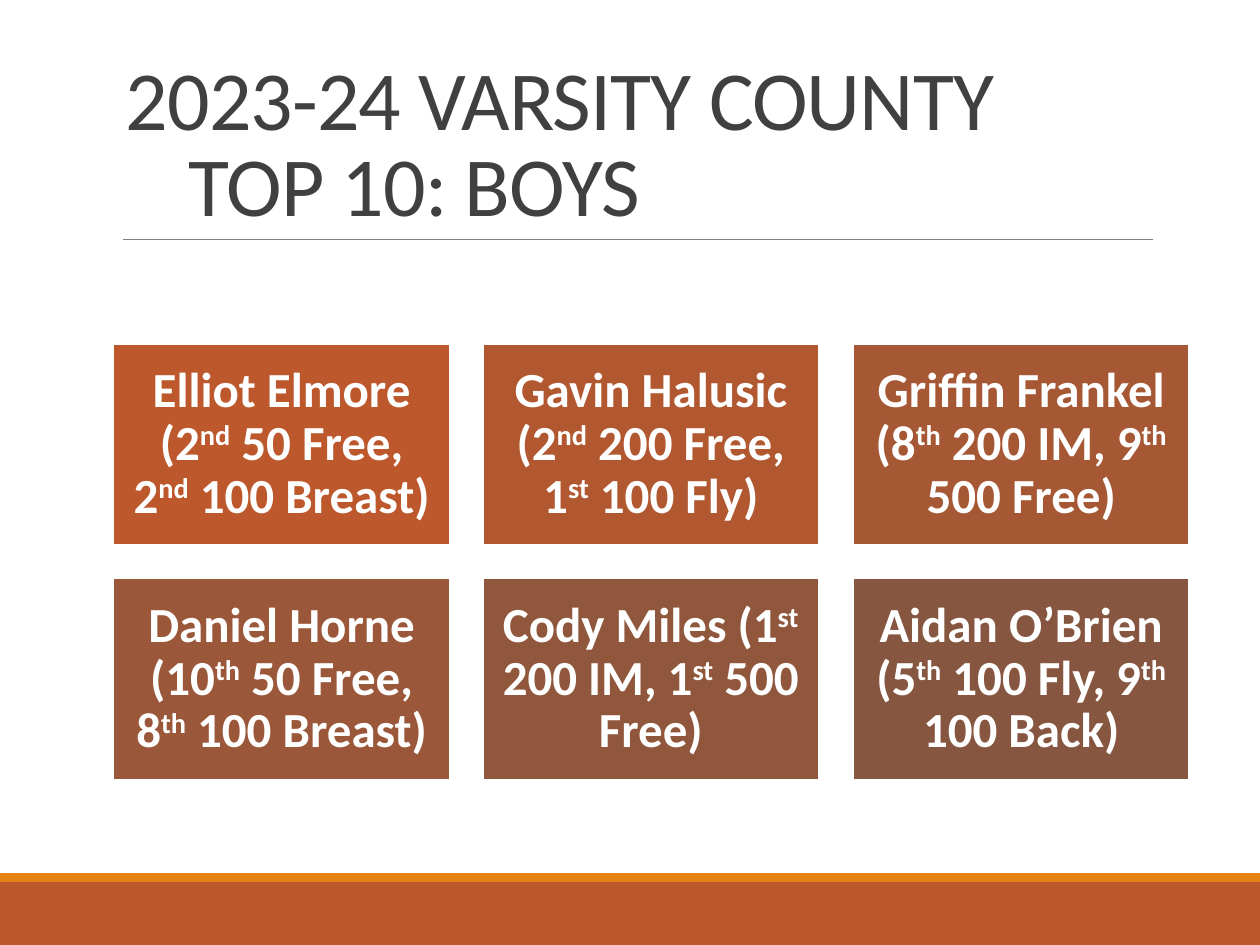
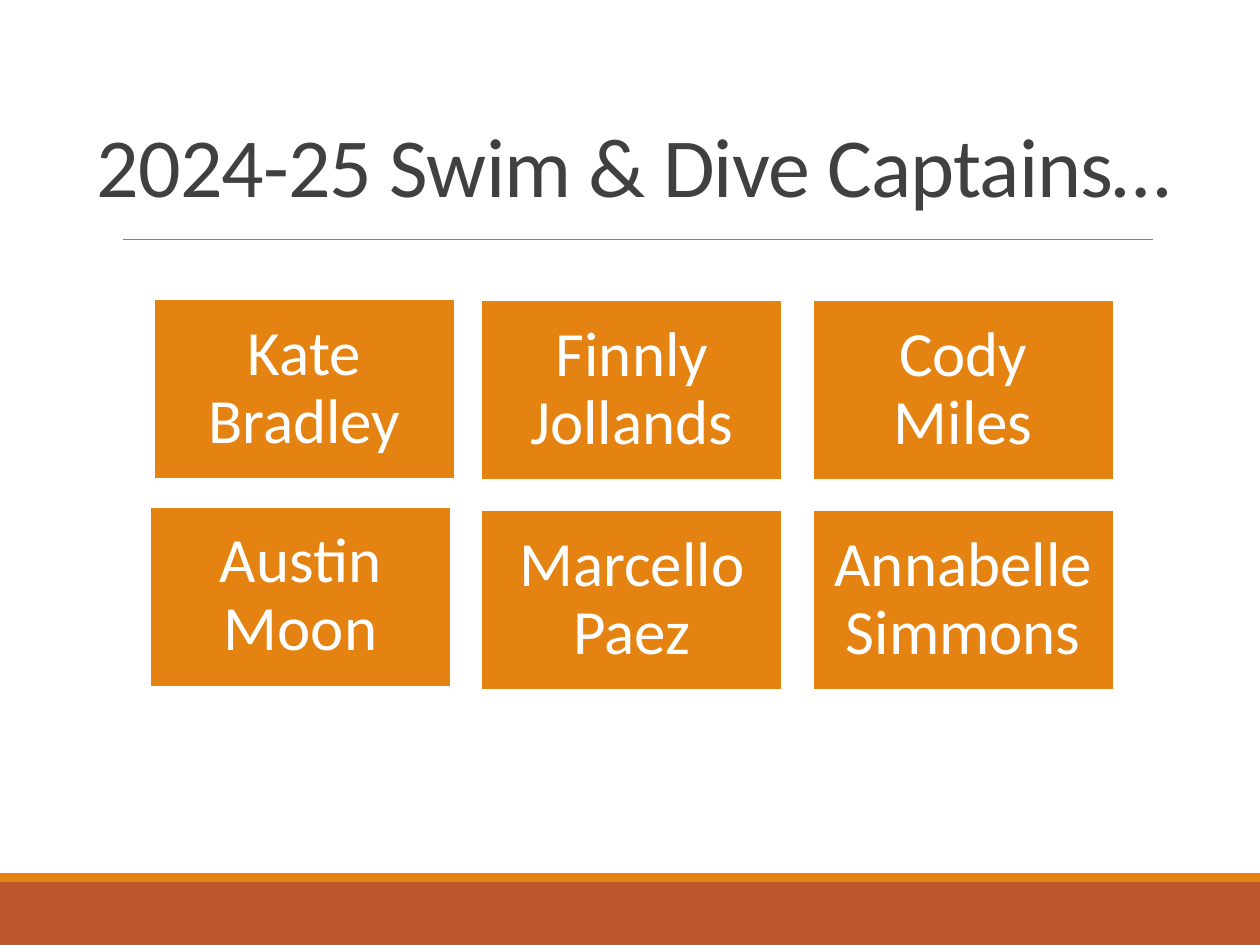
from itertools import product

from lxml import etree
from pptx import Presentation
from pptx.dml.color import RGBColor
from pptx.enum.shapes import MSO_CONNECTOR, MSO_SHAPE
from pptx.enum.text import MSO_ANCHOR, PP_ALIGN
from pptx.oxml.ns import qn
from pptx.util import Inches, Pt

RUST = RGBColor(0xBD, 0x58, 0x2C)
ORANGE = RGBColor(0xE4, 0x83, 0x12)
GRAY = RGBColor(0x80, 0x80, 0x80)
DARK = RGBColor(0x40, 0x40, 0x40)
WHITE = RGBColor(0xFF, 0xFF, 0xFF)
SHADES = [RUST] + [RGBColor.from_string(code) for code in
                   ("B15831", "A65835", "9B5739", "90573D", "865640")]

TITLE = {"name": "Calibri", "size": Pt(48), "bold": False}
RESULT = {"name": "Calibri", "size": Pt(28), "bold": True}
CAPTAIN = {"name": "Calibri", "size": Pt(36), "bold": False}


class Deck:
    """Holds the shared style and the current slide."""

    def __init__(self):
        self.prs = Presentation()
        self.prs.slide_width = Inches(10)
        self.prs.slide_height = Inches(7.5)
        self.slide = None

    def start(self):
        """Add a slide with the footer bands and the title rule."""
        self.slide = self.prs.slides.add_slide(self.prs.slide_layouts[6])
        self.rect((0, 7, 10, 0.5), RUST)
        self.rect((0, 6.93, 10, 0.07), ORANGE)
        self.rule(0.98, 9.15, 1.9)

    def rect(self, area, fill):
        shape = self.slide.shapes.add_shape(
            MSO_SHAPE.RECTANGLE, *map(Inches, area))
        shape.shadow.inherit = False
        shape.fill.solid()
        shape.fill.fore_color.rgb = fill
        shape.line.fill.background()
        return shape

    def rule(self, left, right, top):
        line = self.slide.shapes.add_connector(
            MSO_CONNECTOR.STRAIGHT, *map(Inches, (left, top, right, top)))
        line.line.color.rgb = GRAY
        line.line.width = Pt(0.5)
        etree.SubElement(line._element.spPr, qn("a:effectLst"))

    def style(self, run, look, color):
        for key, value in look.items():
            setattr(run.font, key, value)
        run.font.color.rgb = color

    def title(self, text, area):
        box = self.slide.shapes.add_textbox(*map(Inches, area))
        frame = box.text_frame
        frame.word_wrap = True
        frame.vertical_anchor = MSO_ANCHOR.BOTTOM
        para = frame.paragraphs[0]
        para.text = text
        para.line_spacing = 0.85
        for run in para.runs:
            self.style(run, TITLE, DARK)
            run.font._element.set("spc", "-50")

    def card(self, text, area, fill, look, inset):
        """Draw a filled card; text between ^ marks is raised."""
        shape = self.rect(area, fill)
        shape.line.color.rgb = WHITE
        shape.line.width = Pt(1.25)
        frame = shape.text_frame
        frame.word_wrap = True
        frame.vertical_anchor = MSO_ANCHOR.MIDDLE
        for side in ("left", "top", "right", "bottom"):
            setattr(frame, f"margin_{side}", Inches(inset))
        para = frame.paragraphs[0]
        para.alignment = PP_ALIGN.CENTER
        para.line_spacing = 0.9
        for index, part in enumerate(text.split("^")):
            run = para.add_run()
            run.text = part
            self.style(run, look, WHITE)
            if index % 2:
                run.font._element.set("baseline", "30000")


def main():
    deck = Deck()

    # Boys' county results, each card a shade darker
    deck.start()
    deck.title("2023-24 VARSITY COUNTY\v\tTOP 10: BOYS",
               (0.9, 0.31, 8.25, 1.59))
    results = [
        "Elliot Elmore (2^nd^ 50 Free, 2^nd^ 100 Breast)",
        "Gavin Halusic (2^nd^ 200 Free, 1^st^ 100 Fly)",
        "Griffin Frankel (8^th^ 200 IM, 9^th^ 500 Free)",
        "Daniel Horne (10^th^ 50 Free, 8^th^ 100 Breast)",
        "Cody Miles (1^st^ 200 IM, 1^st^ 500 Free)",
        "Aidan O’Brien (5^th^ 100 Fly, 9^th^ 100 Back)",
    ]
    spots = product((2.73, 4.59), (0.9, 3.83, 6.77))
    for text, (top, left), shade in zip(results, spots, SHADES):
        deck.card(text, (left, top, 2.67, 1.6), shade, RESULT, 0.12)

    # Captains, with the first column set slightly off the grid
    deck.start()
    deck.title("2024-25 Swim & Dive Captains…", (0.67, 0.17, 8.75, 1.58))
    captains = {
        "Kate Bradley": (1.22, 2.37),
        "Finnly Jollands": (3.82, 2.38),
        "Cody Miles": (6.45, 2.38),
        "Austin Moon": (1.19, 4.02),
        "Marcello Paez": (3.82, 4.05),
        "Annabelle Simmons": (6.45, 4.05),
    }
    for name, spot in captains.items():
        deck.card(name, (*spot, 2.39, 1.43), ORANGE, CAPTAIN, 0.15)

    deck.prs.save("out.pptx")


if __name__ == "__main__":
    main()
